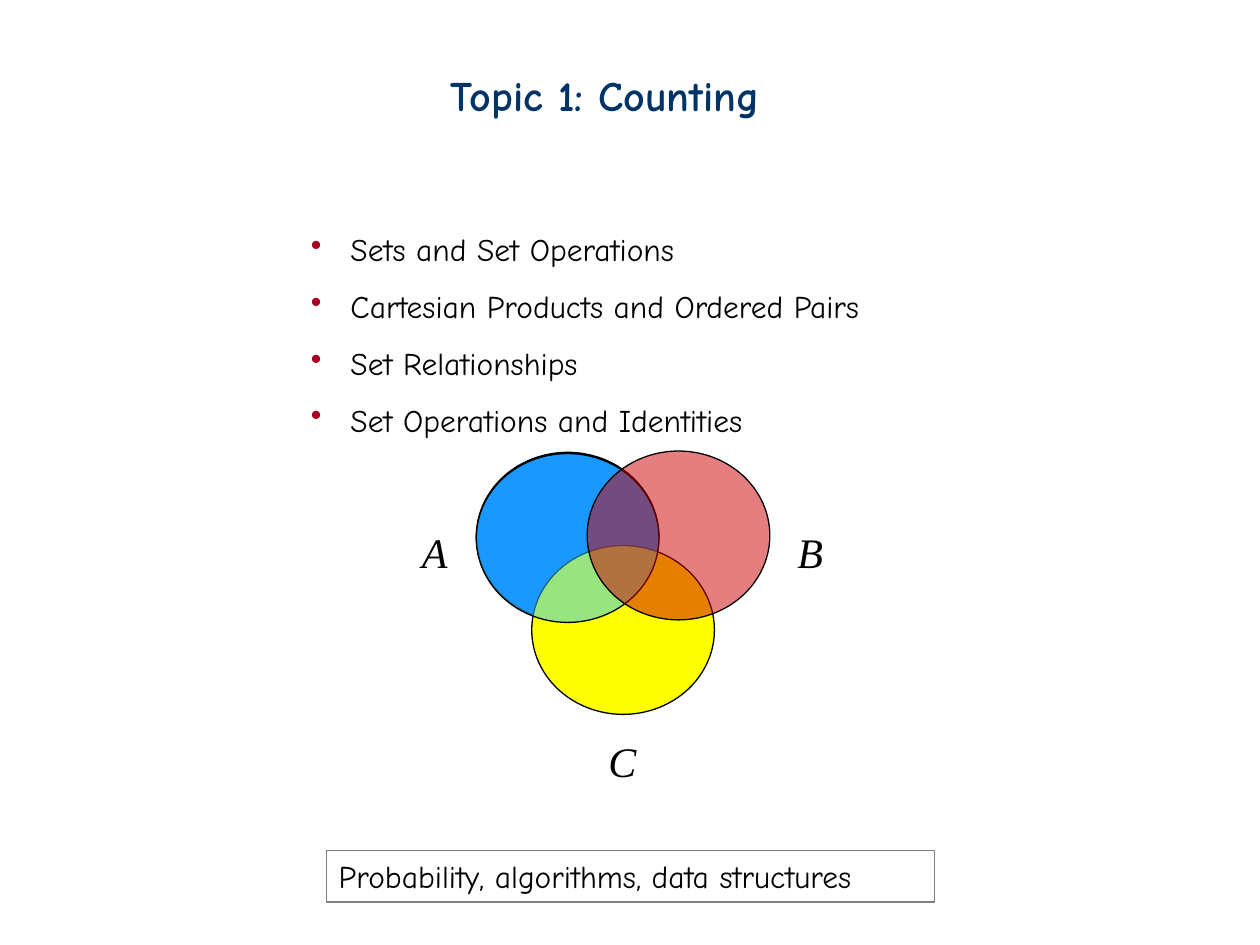
from lxml.etree import SubElement
from pptx import Presentation
from pptx.dml.color import RGBColor
from pptx.enum.shapes import MSO_SHAPE
from pptx.enum.text import MSO_ANCHOR, PP_ALIGN
from pptx.oxml.ns import qn
from pptx.util import Inches, Pt

NAVY = RGBColor(0x00, 0x33, 0x66)
BLACK = RGBColor(0x00, 0x00, 0x00)
GRAY = RGBColor(0x80, 0x80, 0x80)
CRIMSON = RGBColor(0xA5, 0x00, 0x21)
BLUE = RGBColor(0x00, 0x66, 0xFF)
YELLOW = RGBColor(0xFF, 0xFF, 0x00)
SKY = RGBColor(0x33, 0xCC, 0xFF)
RED = RGBColor(0xCC, 0x00, 0x00)

presentation = Presentation()
presentation.slide_width = Inches(10)
presentation.slide_height = Inches(7.5)
slide = presentation.slides.add_slide(presentation.slide_layouts[6])
column = presentation.slide_width // 100
row = presentation.slide_height // 75


def add_outline(kind, left, top, width, height, line_color):
    shape = slide.shapes.add_shape(
        kind, int(left * column), int(top * row), int(width * column), int(height * row)
    )
    shape.shadow.inherit = False
    shape.fill.background()
    shape.line.color.rgb = line_color
    shape.line.width = Pt(0.75)
    return shape


def write_lines(shape, lines, color, font_format):
    frame = shape.text_frame
    frame.word_wrap = True
    frame.vertical_anchor = MSO_ANCHOR.TOP
    for index, line in enumerate(lines):
        paragraph = frame.paragraphs[0] if index == 0 else frame.add_paragraph()
        paragraph.alignment = PP_ALIGN.LEFT
        run = paragraph.add_run()
        run.text = line
        run.font.color.rgb = color
        for name, value in font_format.items():
            setattr(run.font, name, value)
    return frame.paragraphs


title_format = {"name": "Comic Neue", "size": Pt(24), "bold": True}
body_format = {"name": "Comic Neue", "size": Pt(18)}
label_format = {"name": "Times New Roman", "size": Pt(24), "italic": True}
topics = [
    " Sets and Set Operations",
    " Cartesian Products and Ordered Pairs",
    " Set Relationships",
    " Set Operations and Identities",
]

text_boxes = [
    (34.8, 5, 30.2, 5, ["Topic 1: Counting"], NAVY, title_format),
    (23.7, 16.3, 48.3, 23.2, topics, BLACK, body_format),
    (32.5, 41.3, 4, 5, ["A"], BLACK, label_format),
    (62.3, 41.3, 4.1, 5, ["B"], BLACK, label_format),
    (47.3, 57.9, 4.2, 5, ["C"], BLACK, label_format),
]
for left, top, width, height, lines, color, font_format in text_boxes:
    box = slide.shapes.add_textbox(
        int(left * column), int(top * row), int(width * column), int(height * row)
    )
    paragraphs = write_lines(box, lines, color, font_format)
    if lines is topics:
        for paragraph in paragraphs:
            paragraph.line_spacing = 1.5
            properties = paragraph._p.get_or_add_pPr()
            properties.set("marL", str(Inches(0.23)))
            properties.set("indent", str(-Inches(0.23)))
            bullet_color = SubElement(properties, qn("a:buClr"))
            SubElement(bullet_color, qn("a:srgbClr"), val=str(CRIMSON))
            SubElement(properties, qn("a:buChar"), char="•")

applications = add_outline(MSO_SHAPE.RECTANGLE, 25.9, 67.5, 48.3, 4.1, GRAY)
write_lines(applications, ["Probability, algorithms, data structures"], BLACK, body_format)

circles = [
    (37.8, 35.9, BLUE, 100),
    (42.2, 43.3, YELLOW, 100),
    (37.8, 36, SKY, 50),
    (46.6, 35.8, RED, 50),
]
for left, top, color, opacity in circles:
    circle = add_outline(MSO_SHAPE.OVAL, left, top, 14.5, 13.4, BLACK)
    circle.fill.solid()
    circle.fill.fore_color.rgb = color
    if opacity < 100:
        fill_color = circle._element.spPr.find(qn("a:solidFill"))[0]
        SubElement(fill_color, qn("a:alpha"), val=str(opacity * 1000))

presentation.save("out.pptx")
